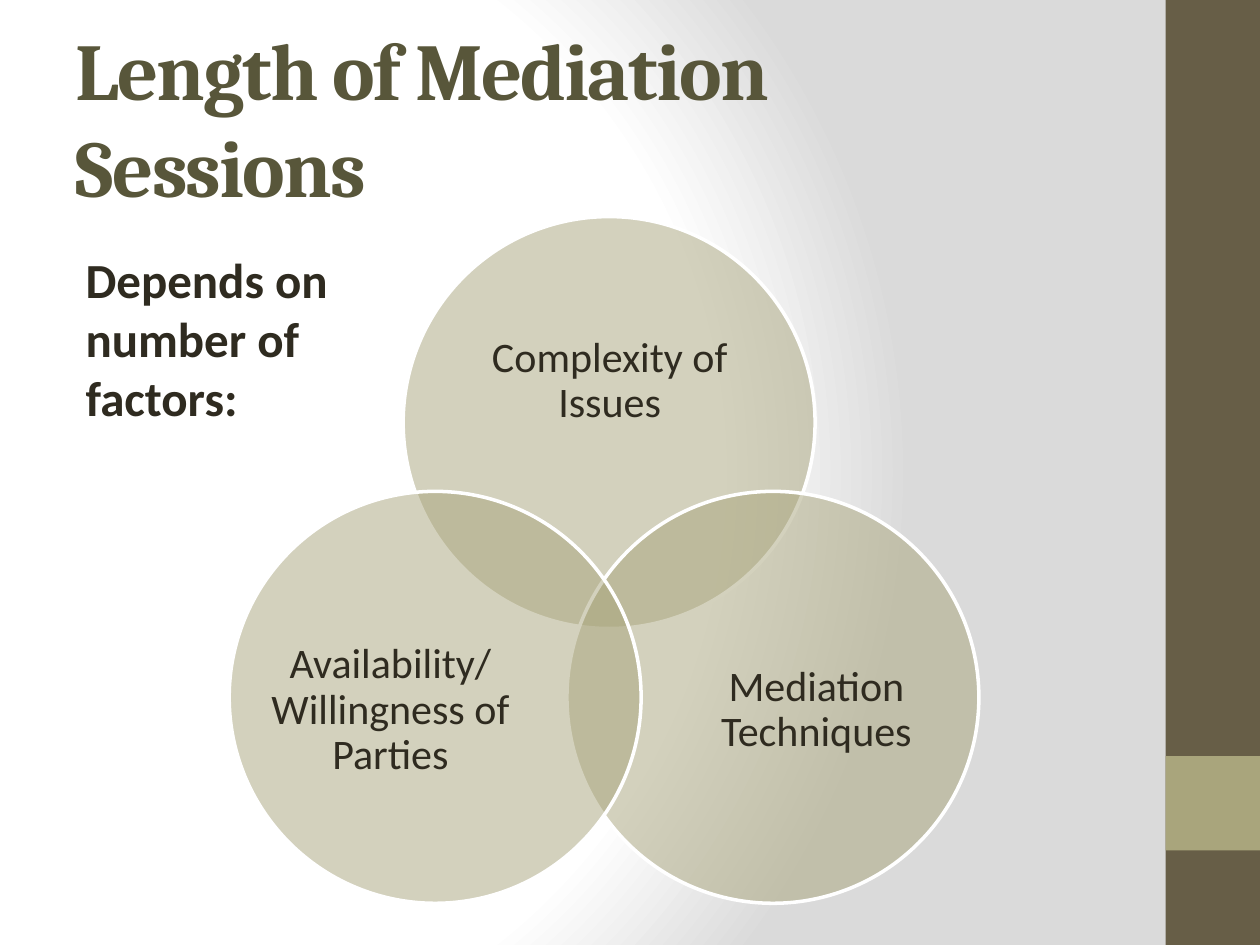
"""Build a slide on the factors behind the length of mediation sessions."""
from dataclasses import dataclass

from lxml.etree import SubElement
from pptx import Presentation
from pptx.dml.color import RGBColor
from pptx.enum.shapes import MSO_SHAPE as Shape
from pptx.enum.text import MSO_ANCHOR as Anchor, MSO_AUTO_SIZE as Fit, PP_ALIGN as Align
from pptx.oxml import parse_xml
from pptx.oxml.ns import nsdecls, qn
from pptx.util import Pt

WHITE = RGBColor(0xFF, 0xFF, 0xFF)
GREY = RGBColor(0xDA, 0xDA, 0xDA)
BROWN = RGBColor(0x67, 0x5E, 0x47)
SAGE = RGBColor(0xA9, 0xA5, 0x7C)
OLIVE = RGBColor(0x58, 0x56, 0x3A)
INK = RGBColor(0x2F, 0x2B, 0x20)
SIDE = 235.4


@dataclass
class Box:
    left: float
    top: float
    width: float
    height: float

    def points(self) -> tuple:
        return tuple(Pt(n) for n in (self.left, self.top, self.width, self.height))


@dataclass
class Factor:
    text: str
    left: float
    top: float
    label: Box


BARS = [(Box(666, 0, 54, 540), BROWN), (Box(666, 432, 54, 54), SAGE)]
FACTORS = [
    Factor("Complexity of Issues", 230.4, 123.8, Box(262, 165, 172.8, 105.8)),
    Factor("Mediation Techniques", 324, 280.8, Box(396, 341.3, 141.1, 129.6)),
    Factor("Availability/ Willingness of Parties", 131, 280.8, Box(152.6, 341.3, 141.1, 129.6)),
]


def paint(slide) -> None:
    slide.background.fill.gradient()
    grad = slide.element.find(".//" + qn("a:gradFill"))
    stops = "".join(
        f'<a:gs pos="{pos * 1000}"><a:srgbClr val="{tone}"/></a:gs>'
        for pos, tone in ((0, WHITE), (75, WHITE), (100, GREY))
    )
    new = parse_xml(
        f'<a:gradFill {nsdecls("a")} rotWithShape="1"><a:gsLst>{stops}</a:gsLst>'
        '<a:path path="circle"><a:fillToRect l="20000" t="50000" r="100000" b="50000"/>'
        "</a:path></a:gradFill>"
    )
    grad.getparent().replace(grad, new)


def draw(shapes, kind: Shape, box: Box, tone: RGBColor):
    shape = shapes.add_shape(kind, *box.points())
    shape.shadow.inherit = False
    shape.fill.solid()
    shape.fill.fore_color.rgb = tone
    shape.line.fill.background()
    return shape


def style(frame, face: str, size: float, tone: RGBColor, bold: bool = False) -> None:
    for run in frame.paragraphs[0].runs:
        run.font.name = face
        run.font.size = Pt(size)
        run.font.color.rgb = tone
        run.font.bold = bold


def write(shapes, box: Box, text: str, size: float, bold: bool = False):
    frame = shapes.add_textbox(*box.points()).text_frame
    frame.word_wrap = True
    frame.text = text
    style(frame, "Calibri", size, INK, bold)
    return frame


def add_title(slide) -> None:
    title = slide.shapes.title
    title.left, title.top, title.width, title.height = Box(36, 21.6, 648, 90).points()
    frame = title.text_frame
    frame.text = "Length of Mediation \vSessions"
    frame.auto_size = Fit.NONE
    frame.vertical_anchor = Anchor.MIDDLE
    frame.paragraphs[0].alignment = Align.LEFT
    style(frame, "Cambria", 46, OLIVE, True)
    for run in frame.paragraphs[0].runs:
        run.font._element.set("spc", "-100")


def add_factor(shapes, item: Factor) -> None:
    disc = draw(shapes, Shape.OVAL, Box(item.left, item.top, SIDE, SIDE), SAGE)
    color = disc.fill._xPr.find(".//" + qn("a:srgbClr"))
    SubElement(color, qn("a:alpha"), val="50000")
    disc.line.color.rgb = WHITE
    disc.line.width = Pt(2)
    frame = write(shapes, item.label, item.text, 24)
    frame.margin_left = frame.margin_right = frame.margin_top = frame.margin_bottom = 0
    frame.vertical_anchor = Anchor.MIDDLE
    frame.paragraphs[0].alignment = Align.CENTER
    frame.paragraphs[0].line_spacing = 0.9


def main() -> None:
    deck = Presentation()
    deck.slide_width, deck.slide_height = Pt(720), Pt(540)
    slide = deck.slides.add_slide(deck.slide_layouts[5])
    paint(slide)
    for box, tone in BARS:
        draw(slide.shapes, Shape.RECTANGLE, box, tone)
    add_title(slide)
    intro = write(slide.shapes, Box(41.8, 139, 200.9, 131), "Depends on number of factors:", 28, True)
    intro.auto_size = Fit.SHAPE_TO_FIT_TEXT
    group = slide.shapes.add_group_shape()
    for item in FACTORS:
        add_factor(group.shapes, item)
    deck.save("out.pptx")


if __name__ == "__main__":
    main()
